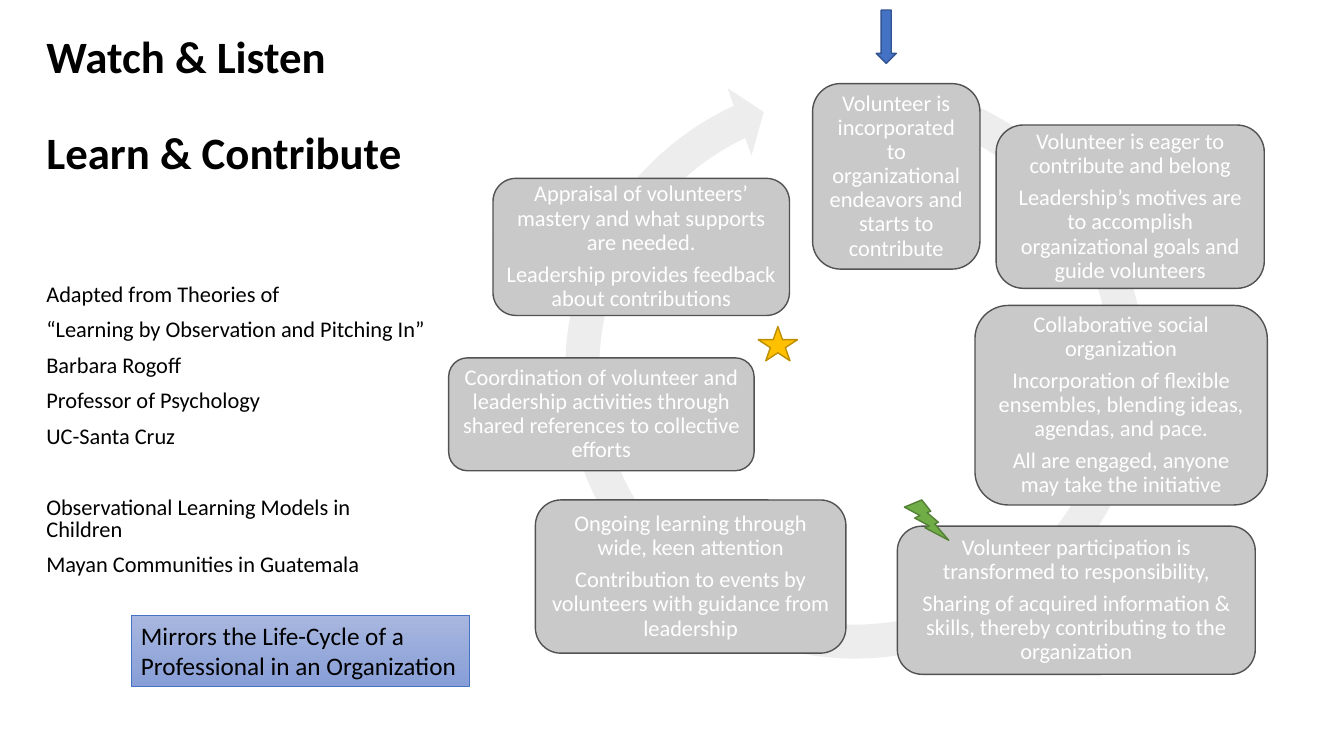
from pptx import Presentation
from pptx.dml.color import RGBColor
from pptx.enum.shapes import MSO_SHAPE as SHAPE
from pptx.enum.text import MSO_ANCHOR as ANCHOR, MSO_AUTO_SIZE as AUTO, PP_ALIGN as ALIGN
from pptx.oxml.xmlchemy import OxmlElement
from pptx.util import Inches, Pt

BLACK = RGBColor(0x00, 0x00, 0x00)
WHITE = RGBColor(0xFF, 0xFF, 0xFF)
RING_GREY = RGBColor(0xED, 0xED, 0xED)
STAGE_GREY = RGBColor(0xC9, 0xC9, 0xC9)
STAGE_EDGE = RGBColor(0x52, 0x52, 0x52)
GOLD, GOLD_EDGE = RGBColor(0xFF, 0xC0, 0x00), RGBColor(0xBD, 0x8E, 0x00)
GREEN, GREEN_EDGE = RGBColor(0x70, 0xAD, 0x47), RGBColor(0x53, 0x80, 0x35)
BLUE, BLUE_EDGE = RGBColor(0x44, 0x72, 0xC4), RGBColor(0x32, 0x54, 0x91)
BANNER_TOP, BANNER_BOTTOM = RGBColor(0xA8, 0xB7, 0xDF), RGBColor(0x88, 0x9E, 0xD7)

# Content: boxes are left, top, width, height in inches
HEADING = ["Watch & Listen", "Learn & Contribute"]
THEORY = [
    "Adapted from Theories of",
    "“Learning by Observation and Pitching In”",
    "Barbara Rogoff",
    "Professor of Psychology",
    "UC-Santa Cruz",
]
MODELS = ["Observational Learning Models in Children", "Mayan Communities in Guatemala"]
BANNER = ["Mirrors the Life-Cycle of a", "Professional in an Organization"]
STAGES = [
    ((8.06, 0.83, 1.66, 1.84),
     ["Volunteer is incorporated to organizational endeavors and starts to contribute"]),
    ((9.88, 1.24, 2.66, 1.62),
     ["Volunteer is eager to contribute and belong",
      "Leadership’s motives are to accomplish organizational goals and guide volunteers"]),
    ((9.67, 3.03, 2.9, 1.98),
     ["Collaborative social organization",
      "Incorporation of flexible ensembles, blending ideas, agendas, and pace.",
      "All are engaged, anyone may take the initiative"]),
    ((8.9, 5.22, 3.55, 1.47),
     ["Volunteer participation is transformed to responsibility,",
      "Sharing of acquired information & skills, thereby contributing to the organization"]),
    ((5.31, 4.96, 3.08, 1.52),
     ["Ongoing learning through wide, keen attention",
      "Contribution to events by volunteers with guidance from leadership"]),
    ((4.45, 3.55, 3.03, 1.12),
     ["Coordination of volunteer and leadership activities through shared references "
      "to collective efforts"]),
    ((4.89, 1.77, 2.94, 1.36),
     ["Appraisal of volunteers’ mastery and what supports are needed.",
      "Leadership provides feedback about contributions"]),
]
MARKERS = [
    (SHAPE.STAR_5_POINT, (7.52, 3.24, 0.39, 0.34), GOLD, GOLD_EDGE),
    (SHAPE.LIGHTNING_BOLT, (8.97, 4.96, 0.44, 0.4), GREEN, GREEN_EDGE),
    (SHAPE.DOWN_ARROW, (8.69, 0.1, 0.2, 0.53), BLUE, BLUE_EDGE),
]
RING_ADJUSTMENTS = (0.055, 3.307, 146.972, 168.471, 0.058)


def place(part, box):
    part.left, part.top, part.width, part.height = map(Inches, box)


def write(frame, lines, size=16, color=BLACK, bold=False, align=ALIGN.LEFT,
          anchor=ANCHOR.TOP, spacing=1.0, before=0, after=0, inset=None, wrap=True):
    frame.word_wrap = wrap
    frame.auto_size = AUTO.NONE
    frame.vertical_anchor = anchor
    if inset is not None:
        frame.margin_left = frame.margin_right = Inches(inset)
        frame.margin_top = frame.margin_bottom = Inches(inset)
    for i, line in enumerate(lines):
        paragraph = frame.paragraphs[0] if i == 0 else frame.add_paragraph()
        paragraph.text = line
        props = paragraph._p.get_or_add_pPr()
        props.set("marL", "0")
        props.set("indent", "0")
        props.append(OxmlElement("a:buNone"))
        paragraph.alignment = align
        paragraph.line_spacing = spacing
        paragraph.space_before = Pt(before if i else 0)
        paragraph.space_after = Pt(after)
        font = paragraph.runs[0].font
        font.name, font.size, font.bold = "Calibri", Pt(size), bold
        font.color.rgb = color


def add_part(slide, kind, box, fill=None, edge=None, edge_width=1):
    part = slide.shapes.add_shape(kind, *map(Inches, box))
    part.shadow.inherit = False
    if fill is not None:
        part.fill.solid()
        part.fill.fore_color.rgb = fill
    if edge is None:
        part.line.fill.background()
    else:
        part.line.color.rgb = edge
        part.line.width = Pt(edge_width)
    return part


def main():
    prs = Presentation()
    prs.slide_width, prs.slide_height = Inches(13.33), Inches(7.5)
    slide = prs.slides.add_slide(prs.slide_layouts[1])

    # Title and source notes
    heading, theory = slide.shapes.title, slide.placeholders[1]
    place(heading, (0.36, 0.33, 4.07, 1.5))
    write(heading.text_frame, HEADING, size=32, bold=True, anchor=ANCHOR.BOTTOM,
          spacing=0.9, before=34)
    place(theory, (0.36, 2.78, 3.99, 3.2))
    write(theory.text_frame, THEORY + MODELS, spacing=0.8, before=10)
    theory.text_frame.paragraphs[len(THEORY)].space_before = Pt(35.5)

    # Cycle ring and its stages
    ring = add_part(slide, SHAPE.CIRCULAR_ARROW, (5.42, 0.6, 6.12, 6.12), RING_GREY)
    for i, value in enumerate(RING_ADJUSTMENTS):
        ring.adjustments[i] = value
    for box, lines in STAGES:
        stage = add_part(slide, SHAPE.ROUNDED_RECTANGLE, box, STAGE_GREY, STAGE_EDGE)
        write(stage.text_frame, lines, color=WHITE, align=ALIGN.CENTER,
              anchor=ANCHOR.MIDDLE, spacing=0.9, after=5.6, inset=0.07)

    # Markers around the cycle
    for kind, box, fill, edge in MARKERS:
        add_part(slide, kind, box, fill, edge)

    # Gradient banner
    banner = add_part(slide, SHAPE.RECTANGLE, (1.3, 6.1, 3.36, 0.71), edge=BLUE, edge_width=0.5)
    banner.fill.gradient()
    banner.fill.gradient_angle = 270
    for stop, position, color in zip(banner.fill.gradient_stops, (0, 1),
                                     (BANNER_TOP, BANNER_BOTTOM)):
        stop.position = position
        stop.color.rgb = color
    write(banner.text_frame, BANNER, size=18, wrap=False)

    prs.save("out.pptx")


if __name__ == "__main__":
    main()
